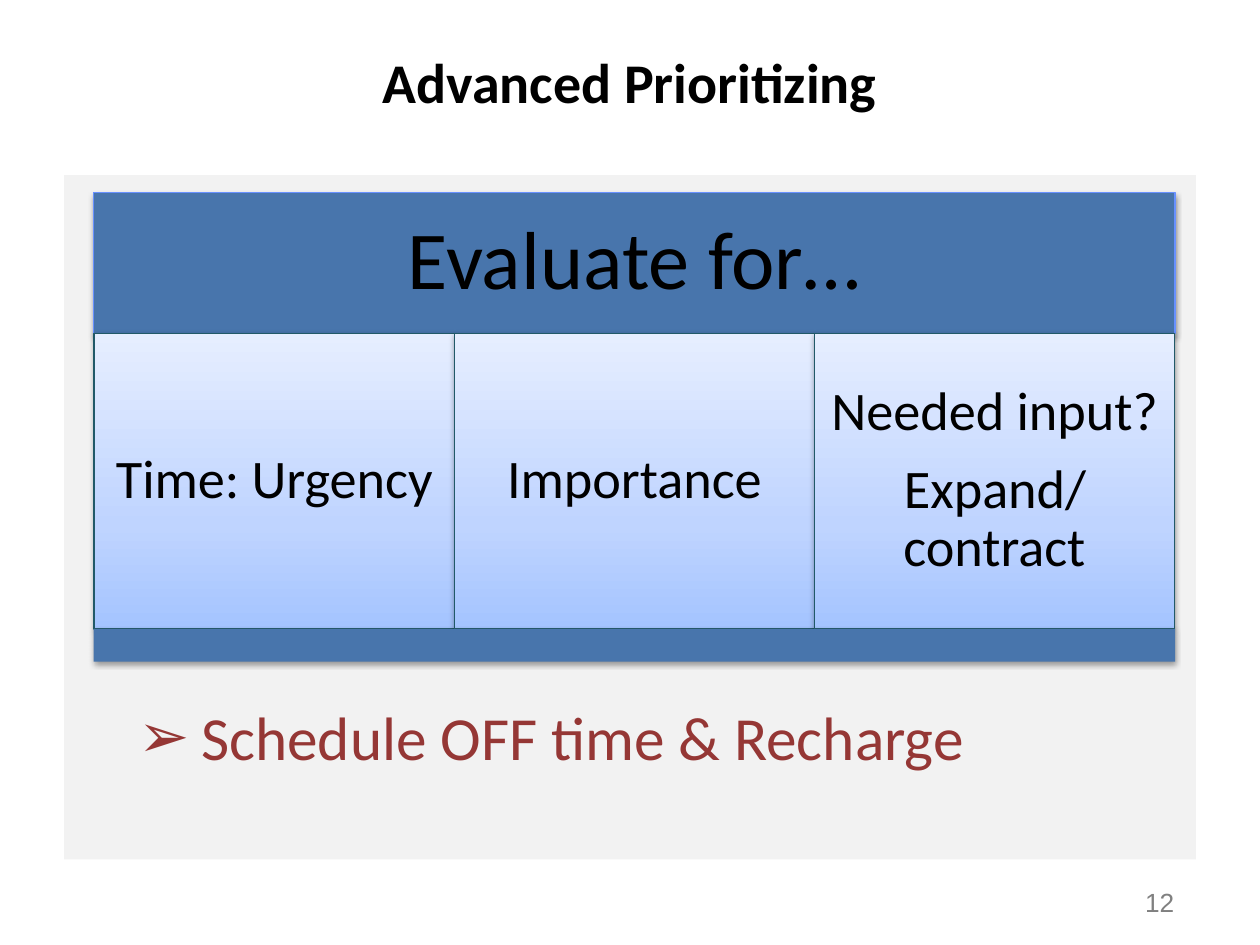
from copy import deepcopy

from lxml import etree
from pptx import Presentation
from pptx.dml.color import RGBColor
from pptx.enum.shapes import MSO_SHAPE
from pptx.enum.text import MSO_ANCHOR, PP_ALIGN
from pptx.oxml.ns import qn
from pptx.util import Pt

RECTANGLE = MSO_SHAPE.RECTANGLE
MIDDLE = MSO_ANCHOR.MIDDLE
CENTER = PP_ALIGN.CENTER

BLACK = RGBColor(0x00, 0x00, 0x00)
GRAY = RGBColor(0x80, 0x80, 0x80)
PANEL_GRAY = RGBColor(0xF2, 0xF2, 0xF2)
BAND_BLUE = RGBColor(0x48, 0x75, 0xAC)
BAND_EDGE = RGBColor(0x68, 0x91, 0xFF)
TEAL = RGBColor(0x21, 0x59, 0x68)
DARK_RED = RGBColor(0x95, 0x37, 0x35)
CRITERION_STOPS = [
    (0, RGBColor(0xA4, 0xC4, 0xFF)),
    (0.35, RGBColor(0xBF, 0xD4, 0xFF)),
    (1, RGBColor(0xE6, 0xEE, 0xFF)),
]


def add_block(left, top, width, height, edge=None, shadow=True):
    """Add a rectangle with an optional thin outline and soft drop shadow."""
    block = slide.shapes.add_shape(RECTANGLE, Pt(left), Pt(top), Pt(width), Pt(height))
    block.shadow.inherit = False
    if shadow:
        effects = block._element.spPr.find(qn("a:effectLst"))
        outer = etree.SubElement(effects, qn("a:outerShdw"), blurRad=str(Pt(3.1)),
                                 dist=str(Pt(1.6)), dir="5400000", rotWithShape="0")
        color = etree.SubElement(outer, qn("a:srgbClr"), val="000000")
        etree.SubElement(color, qn("a:alpha"), val="38000")
    if edge is None:
        block.line.fill.background()
    else:
        block.line.color.rgb = edge
        block.line.width = Pt(0.75)
    return block


def write_centered(block, text, size, inset):
    frame = block.text_frame
    frame.text = text
    frame.word_wrap = True
    frame.vertical_anchor = MIDDLE
    frame.margin_left = frame.margin_right = Pt(inset)
    frame.margin_top = frame.margin_bottom = Pt(inset)
    for paragraph in frame.paragraphs:
        paragraph.alignment = CENTER
        paragraph.line_spacing = 0.9
        paragraph.space_after = Pt(round(size * 0.35))
        paragraph.font.name = "Calibri"
        paragraph.font.size = Pt(size)
        paragraph.font.color.rgb = BLACK


prs = Presentation()
prs.slide_width, prs.slide_height = Pt(720), Pt(540)
slide = prs.slides.add_slide(prs.slide_layouts[5])

# Title
title = slide.shapes.title
title.left, title.top, title.width, title.height = Pt(36), Pt(21.6), Pt(648), Pt(49.7)
title.text_frame.text = "Advanced Prioritizing"
title.text_frame.vertical_anchor = MIDDLE
heading = title.text_frame.paragraphs[0]
heading.alignment = CENTER
heading.font.name = "Calibri"
heading.font.size = Pt(32)
heading.font.bold = True
heading.font.color.rgb = BLACK

# Background panel
panel = add_block(36.7, 100.1, 646.6, 391, shadow=False)
panel.fill.solid()
panel.fill.fore_color.rgb = PANEL_GRAY

# Header band, three criteria, footer band
BAND_LEFT, BAND_WIDTH = 53.5, 618
header = add_block(BAND_LEFT, 110, BAND_WIDTH, 80.5, BAND_EDGE)
header.fill.solid()
header.fill.fore_color.rgb = BAND_BLUE
write_centered(header, "Evaluate for…", 47, 14.4)

CRITERION_WIDTH = 205.8
criteria = ["Time: Urgency", "Importance", "Needed input?\nExpand/contract"]
for column, criterion in enumerate(criteria):
    cell = add_block(53.8 + column * CRITERION_WIDTH, 190.4, CRITERION_WIDTH, 169, TEAL)
    cell.fill.gradient()
    stop_list = cell._element.spPr.find(".//" + qn("a:gsLst"))
    stop_list.append(deepcopy(stop_list[0]))
    for stop, (position, color) in zip(cell.fill.gradient_stops, CRITERION_STOPS):
        stop.position = position
        stop.color.rgb = color
    cell.fill.gradient_angle = 90
    write_centered(cell, criterion, 31, 9.4)

footer = add_block(BAND_LEFT, 359.4, BAND_WIDTH, 18.7)
footer.fill.solid()
footer.fill.fore_color.rgb = BAND_BLUE

# Reminder
reminder_box = slide.shapes.add_textbox(Pt(72), Pt(396), Pt(582), Pt(49.7))
reminder_box.text_frame.word_wrap = True
reminder_box.text_frame.text = "Schedule OFF time & Recharge"
reminder = reminder_box.text_frame.paragraphs[0]
properties = reminder._p.get_or_add_pPr()
properties.set("marL", str(Pt(36)))
properties.set("indent", str(-Pt(36)))
etree.SubElement(properties, qn("a:buFont"), typeface="Arial")
etree.SubElement(properties, qn("a:buChar"), char="➢")
reminder.font.name = "Calibri"
reminder.font.size = Pt(35)
reminder.font.color.rgb = DARK_RED

# Page number
page_box = slide.shapes.add_textbox(Pt(647.3), Pt(502.6), Pt(33.1), Pt(25.2))
page_box.text_frame.word_wrap = False
page_box.text_frame.text = "12"
page_number = page_box.text_frame.paragraphs[0]
page_number.font.name = "Arial"
page_number.font.size = Pt(15)
page_number.font.color.rgb = GRAY

prs.save("out.pptx")
